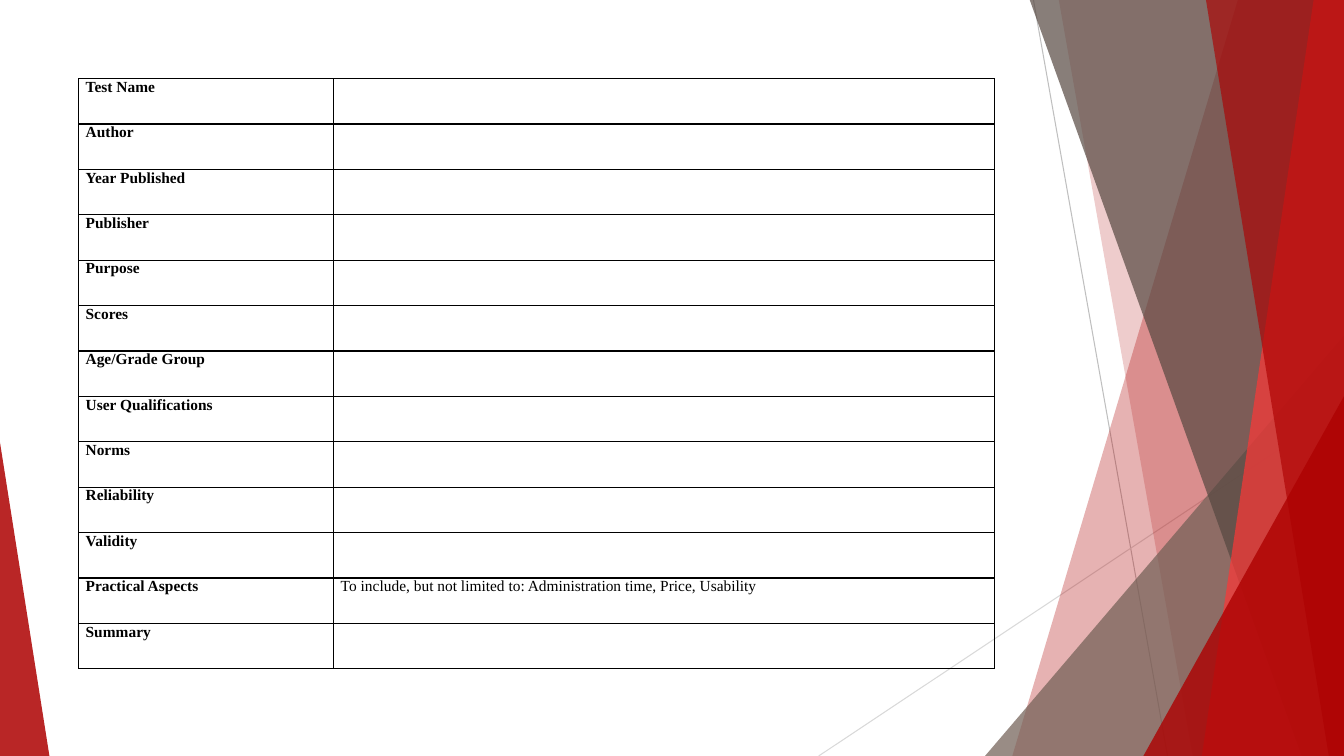
from lxml import etree
from pptx import Presentation
from pptx.dml.color import RGBColor
from pptx.enum.shapes import MSO_CONNECTOR, MSO_SHAPE
from pptx.oxml.ns import qn
from pptx.util import Inches, Pt

STRAIGHT = MSO_CONNECTOR.STRAIGHT
TRIANGLE = MSO_SHAPE.ISOSCELES_TRIANGLE

THEME = {
    "font": "Times New Roman",
    "text_size": 11,
    "border_width": 1,
    "ray_width": 0.75,
    "black": "000000",
    "ray_dark": "BFBFBF",
    "ray_light": "D9D9D9",
    "red": "AD0101",
    "bright_red": "FE3737",
    "taupe": "726056",
    "dark_taupe": "564841",
}
WIDTH, HEIGHT = 13.33, 7.5

prs = Presentation()
prs.slide_width, prs.slide_height = Inches(WIDTH), Inches(HEIGHT)
slide = prs.slides.add_slide(prs.slide_layouts[6])
shapes = slide.shapes


def paint(facet, color, opacity):
    facet.shadow.inherit = False
    facet.line.fill.background()
    facet.fill.solid()
    facet.fill.fore_color.rgb = RGBColor.from_string(THEME[color])
    tint = facet.fill._xPr.find(qn("a:solidFill"))[0]
    etree.SubElement(tint, qn("a:alpha"), val=str(opacity * 1000))


def draw_border(cell):
    properties = cell._tc.get_or_add_tcPr()
    for side in ("a:lnL", "a:lnR", "a:lnT", "a:lnB"):
        edge = etree.SubElement(properties, qn(side), w=str(Pt(THEME["border_width"])))
        ink = etree.SubElement(edge, qn("a:solidFill"))
        etree.SubElement(ink, qn("a:srgbClr"), val=THEME["black"])


for start, end, color in (
    ((10.25, 0), (11.58, HEIGHT), "ray_dark"),
    ((WIDTH, 4.03), (8.12, HEIGHT), "ray_light"),
):
    ray = shapes.add_connector(STRAIGHT, *map(Inches, start + end))
    ray.line.width = Pt(THEME["ray_width"])
    ray.line.color.rgb = RGBColor.from_string(THEME[color])
    etree.SubElement(ray._element.spPr, qn("a:effectLst"))

BANDS_BEHIND = [(12.28, 10.04, "red", 30), (10.5, 11.83, "red", 20)]
BANDS_FRONT = [
    (10.21, 12.91, "dark_taupe", 70),
    (13.03, 11.92, "bright_red", 70),
    (11.96, 13.18, "red", 65),
]
CORNER_BEHIND = [(9.77, 3.33, 3.56, 1, "taupe", 72)]
CORNERS_FRONT = [(11.34, 3.93, 1.99, 1, "red", 80), (0, 4.39, 0.49, 0, "red", 85)]

for bands, corners in ((BANDS_BEHIND, CORNER_BEHIND), (BANDS_FRONT, CORNERS_FRONT)):
    for top_x, bottom_x, color, opacity in bands:
        outline = shapes.build_freeform(Inches(top_x), Inches(-0.01))
        outline.add_line_segments(
            [
                (Inches(x), Inches(y))
                for x, y in ((WIDTH, -0.01), (WIDTH, HEIGHT), (bottom_x, HEIGHT))
            ],
            close=True,
        )
        paint(outline.convert_to_shape(), color, opacity)
    for left, top, width, apex, color, opacity in corners:
        corner = shapes.add_shape(
            TRIANGLE, Inches(left), Inches(top), Inches(width), Inches(HEIGHT - top)
        )
        corner.adjustments[0] = apex
        paint(corner, color, opacity)

REVIEW_ROWS = [
    ("Test Name", ""),
    ("Author", ""),
    ("Year Published", ""),
    ("Publisher", ""),
    ("Purpose", ""),
    ("Scores", ""),
    ("Age/Grade Group", ""),
    ("User Qualifications", ""),
    ("Norms", ""),
    ("Reliability", ""),
    ("Validity", ""),
    (
        "Practical Aspects",
        "To include, but not limited to: Administration time, Price, Usability",
    ),
    ("Summary", ""),
]
CELL_MARGINS = {
    "margin_left": Inches(0.07),
    "margin_right": Inches(0.07),
    "margin_top": 0,
    "margin_bottom": 0,
}

review = shapes.add_table(
    len(REVIEW_ROWS), 2, Inches(0.78), Inches(0.78), Inches(9.08), Inches(5.86)
).table
review.first_row = False
review.horz_banding = False
for column, width in zip(review.columns, (2.53, 6.55)):
    column.width = Inches(width)

for row, entries in enumerate(REVIEW_ROWS):
    for col, entry in enumerate(entries):
        cell = review.cell(row, col)
        for name, value in CELL_MARGINS.items():
            setattr(cell, name, value)
        draw_border(cell)
        cell.fill.background()
        cell.text = entry
        font = cell.text_frame.paragraphs[0].font
        font.name = THEME["font"]
        font.size = Pt(THEME["text_size"])
        font.bold = col == 0
        font.color.rgb = RGBColor.from_string(THEME["black"])

prs.save("out.pptx")
